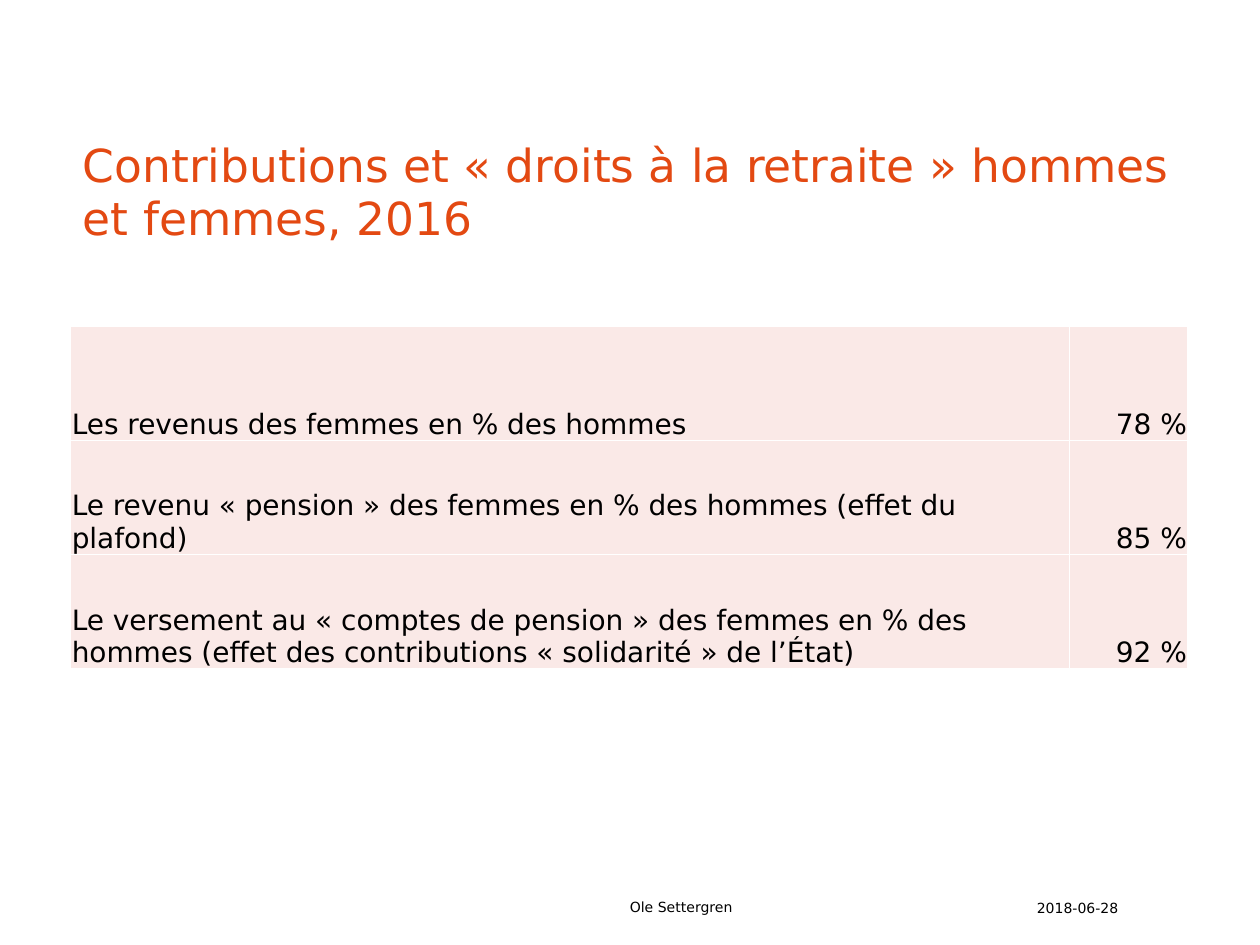
from lxml.etree import SubElement
from pptx import Presentation
from pptx.dml.color import RGBColor
from pptx.enum.text import MSO_ANCHOR, PP_ALIGN
from pptx.oxml.ns import qn
from pptx.util import Inches, Pt

FONT = "DejaVu Sans"
COLORS = {"title": "E34912", "text": "000000", "cell": "FAE9E7", "border": "FFFFFF"}
ROWS = [
    ("Les revenus des femmes en % des hommes", "78 %"),
    ("Le revenu « pension » des femmes en % des hommes (effet du plafond)", "85 %"),
    ("Le versement au « comptes de pension » des femmes en % des hommes "
     "(effet des contributions « solidarité » de l’État)", "92 %"),
]


def write(tf, text, size, color="text", align=PP_ALIGN.LEFT):
    tf.text = text
    tf.word_wrap = True
    p = tf.paragraphs[0]
    p.alignment = align
    font = p.runs[0].font
    font.name, font.size = FONT, Pt(size)
    font.color.rgb = RGBColor.from_string(COLORS[color])
    return p


def add_text(s, box, text, size, color="text", anchor=MSO_ANCHOR.BOTTOM):
    tf = s.shapes.add_textbox(*map(Inches, box)).text_frame
    tf.vertical_anchor = anchor
    return write(tf, text, size, color)


def add_title(s, box):
    p = add_text(s, box, "Contributions et « droits à la retraite » hommes et femmes, 2016",
                 26, "title")
    p.line_spacing = Pt(30)


def set_borders(cell):
    tc_pr = cell._tc.get_or_add_tcPr()
    for side in ("lnL", "lnR", "lnT", "lnB"):
        ln = SubElement(tc_pr, qn(f"a:{side}"), w=str(Pt(1)))
        fill = SubElement(ln, qn("a:solidFill"))
        SubElement(fill, qn("a:srgbClr"), val=COLORS["border"])


def add_ratio_table(s, box, value_width=0.94):
    left, top, width, height = box
    table = s.shapes.add_table(len(ROWS), 2, *map(Inches, box)).table
    table.columns[0].width = Inches(width - value_width)
    table.columns[1].width = Inches(value_width)
    for row, texts in zip(table.rows, ROWS):
        row.height = Inches(height / len(ROWS))
        for cell, text, align in zip(row.cells, texts, (PP_ALIGN.LEFT, PP_ALIGN.RIGHT)):
            write(cell.text_frame, text, 16, align=align)
            cell.vertical_anchor = MSO_ANCHOR.BOTTOM
            cell.margin_left = cell.margin_right = cell.margin_top = Inches(0.01)
            cell.margin_bottom = 0
            set_borders(cell)
            cell.fill.solid()
            cell.fill.fore_color.rgb = RGBColor.from_string(COLORS["cell"])


def add_footer(s, box):
    left, top, width, height = box
    date_width, gap = 0.98, 0.08
    author_width = width - date_width - gap
    add_text(s, (left, top, author_width, height), "Ole Settergren", 8,
             anchor=MSO_ANCHOR.MIDDLE)
    add_text(s, (left + author_width + gap, top, date_width, height), "2018-06-28", 8)


def main():
    prs = Presentation()
    prs.slide_width, prs.slide_height = Inches(10), Inches(7.5)
    s = prs.slides.add_slide(prs.slide_layouts[6])
    add_title(s, (0.56, 1.08, 8.87, 0.91))
    add_ratio_table(s, (0.56, 2.59, 8.87, 2.72))
    add_footer(s, (4.9, 7.08, 4.21, 0.24))
    prs.save("out.pptx")


if __name__ == "__main__":
    main()
